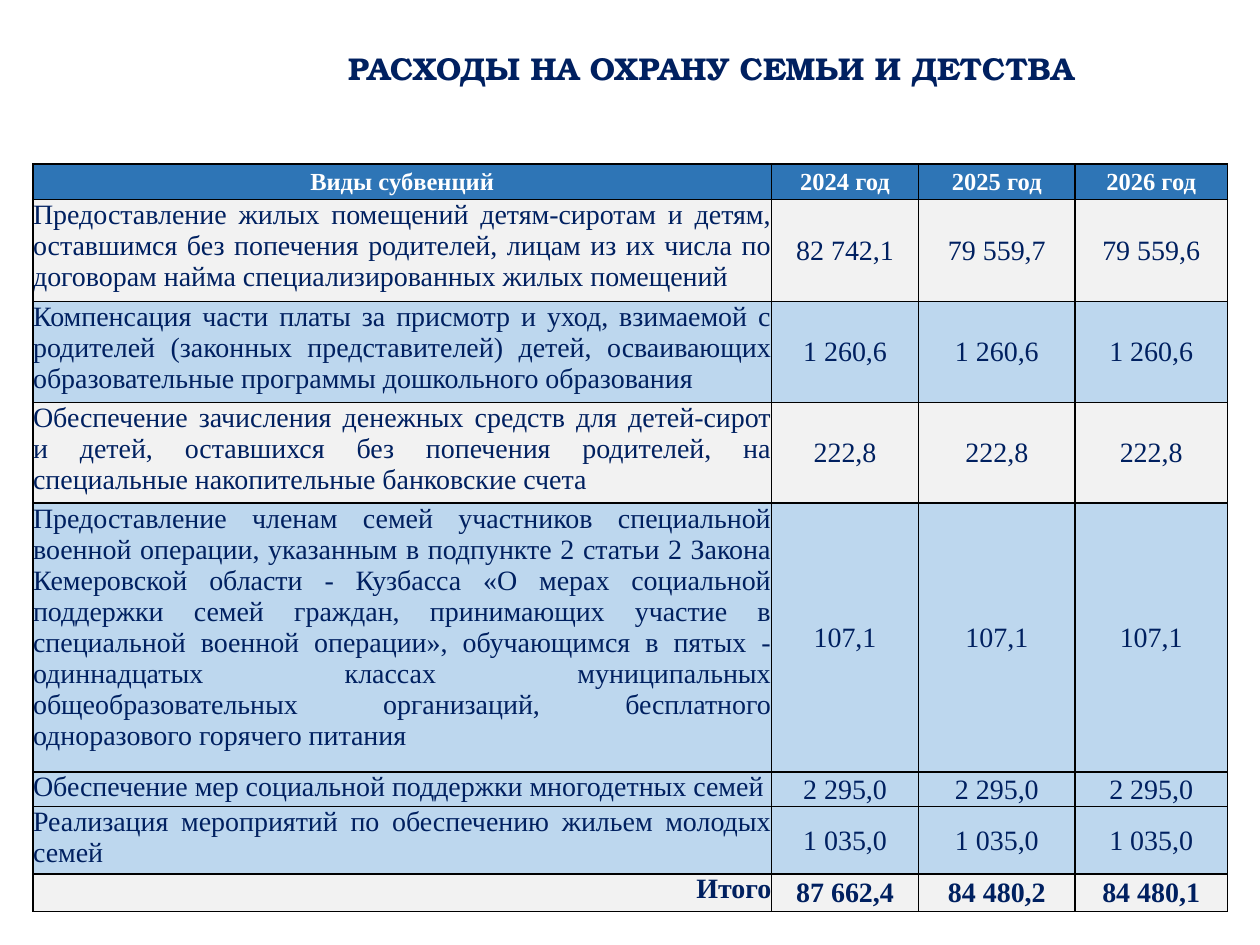
from lxml import etree
from pptx import Presentation
from pptx import util as u
from pptx.dml.color import RGBColor
from pptx.enum import text
from pptx.oxml import ns

Pt = u.Pt
ALIGN, ANCHOR = text.PP_ALIGN, text.MSO_ANCHOR
NAVY, WHITE, BLACK = "002060", "FFFFFF", "000000"
HEADER_BLUE, LIGHT_BLUE, LIGHT_GREY = "2E75B6", "BDD7EE", "F2F2F2"

TITLE = "РАСХОДЫ НА ОХРАНУ СЕМЬИ И ДЕТСТВА"
COLUMN_WIDTHS = [421.9, 84.2, 89.3, 87.1]
HEADER = ["Виды субвенций", "2024 год", "2025 год", "2026 год"]
# Each row: height, fill, description, values for the three years
SUBVENTIONS = [
    (58.3, LIGHT_GREY,
     "Предоставление жилых помещений детям-сиротам и детям, оставшимся без попечения "
     "родителей, лицам из их числа по договорам найма специализированных жилых помещений",
     ["82 742,1", "79 559,7", "79 559,6"]),
    (56.9, LIGHT_BLUE,
     "Компенсация части платы за присмотр и уход, взимаемой с родителей (законных "
     "представителей) детей, осваивающих образовательные программы дошкольного образования",
     ["1 260,6"] * 3),
    (54.7, LIGHT_GREY,
     "Обеспечение зачисления денежных средств для детей-сирот и детей, оставшихся без "
     "попечения родителей, на специальные накопительные банковские счета",
     ["222,8"] * 3),
    (151.9, LIGHT_BLUE,
     "Предоставление членам семей участников специальной военной операции, указанным в "
     "подпункте 2 статьи 2 Закона Кемеровской области - Кузбасса «О мерах социальной "
     "поддержки семей граждан, принимающих участие в специальной военной операции», "
     "обучающимся в пятых - одиннадцатых классах муниципальных общеобразовательных "
     "организаций, бесплатного одноразового горячего питания",
     ["107,1"] * 3),
    (18, LIGHT_BLUE, "Обеспечение мер социальной поддержки многодетных семей",
     ["2 295,0"] * 3),
    (35.3, LIGHT_BLUE, "Реализация мероприятий по обеспечению жильем молодых семей",
     ["1 035,0"] * 3),
]
TOTAL = ["Итого", "87 662,4", "84 480,2", "84 480,1"]


def color(value):
    return RGBColor.from_string(value)


def write(paragraph, words, align, font_name, size, font_color, bold):
    paragraph.text = words
    paragraph.alignment = align
    font = paragraph.font
    font.name, font.size, font.bold = font_name, Pt(size), bold
    font.color.rgb = color(font_color)


def add_borders(cell):
    properties = cell._tc.get_or_add_tcPr()
    for position, side in enumerate(("a:lnL", "a:lnR", "a:lnT", "a:lnB")):
        line = etree.Element(ns.qn(side), w=str(Pt(1)))
        fill = etree.SubElement(line, ns.qn("a:solidFill"))
        etree.SubElement(fill, ns.qn("a:srgbClr"), val=BLACK)
        properties.insert(position, line)


def fill_cell(cell, words, fill, align=ALIGN.CENTER, size=16, font_color=NAVY, bold=False):
    centered = align == ALIGN.CENTER
    inset = Pt(0.7 if centered else 0)
    cell.margin_left = cell.margin_right = cell.margin_top = inset
    cell.margin_bottom = 0
    cell.vertical_anchor = ANCHOR.MIDDLE if centered else ANCHOR.TOP
    cell.fill.solid()
    cell.fill.fore_color.rgb = color(fill)
    add_borders(cell)
    write(cell.text_frame.paragraphs[0], words, align, "Times New Roman",
          size, font_color, bold)


def add_title(slide, left, top, width, height):
    box = slide.shapes.add_textbox(Pt(left), Pt(top), Pt(width), Pt(height))
    frame = box.text_frame
    frame.word_wrap = True
    frame.vertical_anchor = ANCHOR.MIDDLE
    paragraph = frame.paragraphs[0]
    paragraph.line_spacing = 0.9
    write(paragraph, TITLE, ALIGN.CENTER, "TeX Gyre Bonum", 18, NAVY, True)


def add_expense_table(slide, left, top):
    heights = [20.2] + [row[0] for row in SUBVENTIONS] + [21.6]
    table = slide.shapes.add_table(
        len(heights), len(COLUMN_WIDTHS), Pt(left), Pt(top),
        Pt(sum(COLUMN_WIDTHS)), Pt(sum(heights))).table
    for column, width in zip(table.columns, COLUMN_WIDTHS):
        column.width = Pt(width)
    for row, height in zip(table.rows, heights):
        row.height = Pt(height)

    # Header row
    for cell, words in zip(table.rows[0].cells, HEADER):
        fill_cell(cell, words, HEADER_BLUE, size=14, font_color=WHITE, bold=True)

    # Subvention rows
    for index, (_, fill, description, values) in enumerate(SUBVENTIONS, 1):
        fill_cell(table.cell(index, 0), description, fill, ALIGN.JUSTIFY)
        for column, value in enumerate(values, 1):
            fill_cell(table.cell(index, column), value, fill)

    # Total row
    for column, words in enumerate(TOTAL):
        align = ALIGN.CENTER if column else ALIGN.RIGHT
        fill_cell(table.cell(len(heights) - 1, column), words, LIGHT_GREY, align, bold=True)


def main():
    presentation = Presentation()
    presentation.slide_width, presentation.slide_height = Pt(720), Pt(540)
    slide = presentation.slides.add_slide(presentation.slide_layouts[6])
    add_title(slide, 140.4, 0, 532, 80.6)
    add_expense_table(slide, 18.9, 93.8)
    presentation.save("out.pptx")


if __name__ == "__main__":
    main()
